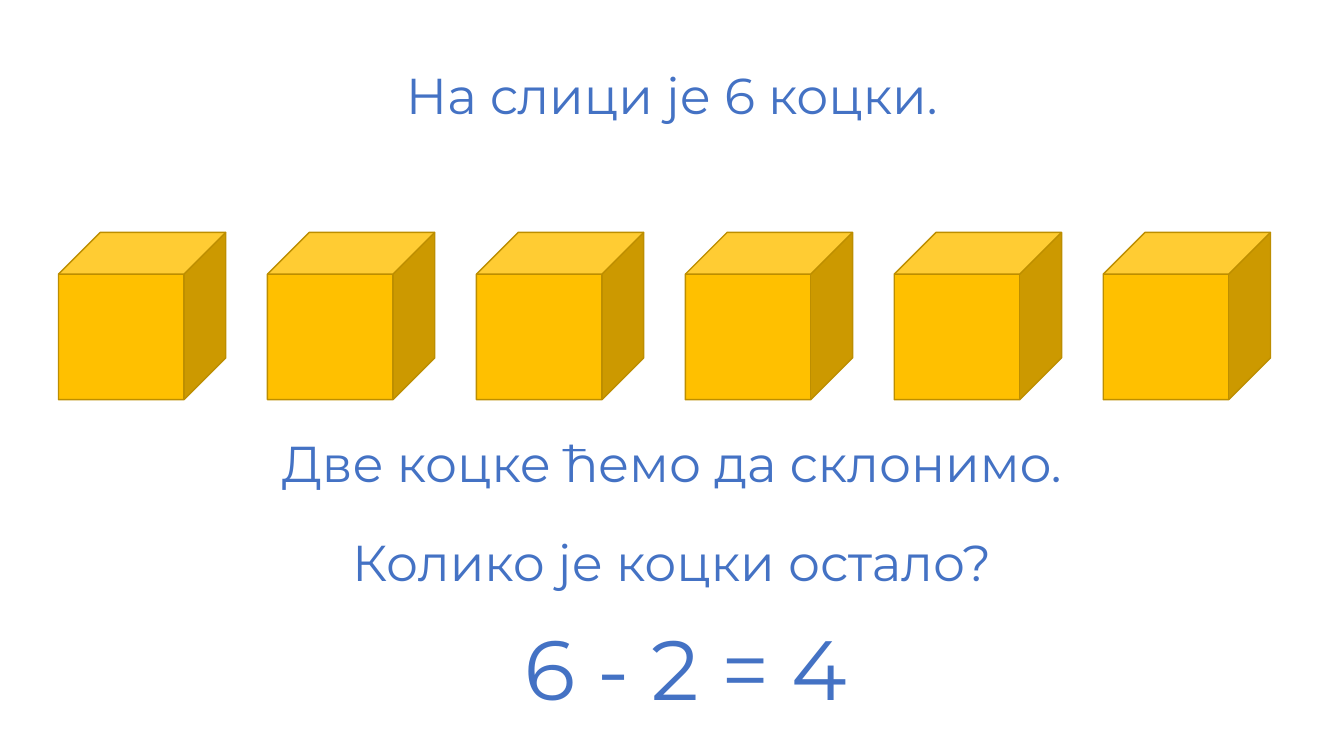
import pptx
import pptx.dml.color
import pptx.enum.shapes
import pptx.enum.text
import pptx.util

Pt = pptx.util.Pt

# text, left, top, width, height, font size
LINES = [
    ("На слици је 6 коцки.", 193.7, 42.5, 572.4, 51, 36),
    ("Две коцке ћемо да склонимо.", 151.2, 305.3, 657.4, 51, 36),
    ("Колико је коцки остало?", 151.2, 375.8, 657.4, 51, 36),
    ("6 - 2 = 4", 161.3, 437, 657.4, 80, 60),
]
FONT = "Montserrat"
BLUE, GOLD, EDGE = "4472C4", "FFC000", "BD8E00"

CUBES = 6
LEFT, TOP = 41.8, 166
SIDE, STEP = 119.5, 149.25


def paint(color, code):
    color.rgb = pptx.dml.color.RGBColor.from_string(code)


def add_line(slide, text, left, top, width, height, size):
    box = slide.shapes.add_textbox(Pt(left), Pt(top), Pt(width), Pt(height))
    frame = box.text_frame
    frame.word_wrap = True
    frame.auto_size = pptx.enum.text.MSO_AUTO_SIZE.SHAPE_TO_FIT_TEXT
    para = frame.paragraphs[0]
    para.text = text
    para.alignment = pptx.enum.text.PP_ALIGN.CENTER
    para.font.name = FONT
    para.font.size = Pt(size)
    paint(para.font.color, BLUE)


def add_cube(slide, left):
    cube = slide.shapes.add_shape(
        pptx.enum.shapes.MSO_SHAPE.CUBE, Pt(left), Pt(TOP), Pt(SIDE), Pt(SIDE))
    cube.shadow.inherit = False
    cube.fill.solid()
    paint(cube.fill.fore_color, GOLD)
    paint(cube.line.color, EDGE)
    cube.line.width = Pt(1)


def main():
    deck = pptx.Presentation()
    deck.slide_width, deck.slide_height = Pt(960), Pt(540)
    slide = deck.slides.add_slide(deck.slide_layouts[6])
    for i in range(CUBES):
        add_cube(slide, LEFT + i * STEP)
    for line in LINES:
        add_line(slide, *line)
    deck.save("out.pptx")


if __name__ == "__main__":
    main()
